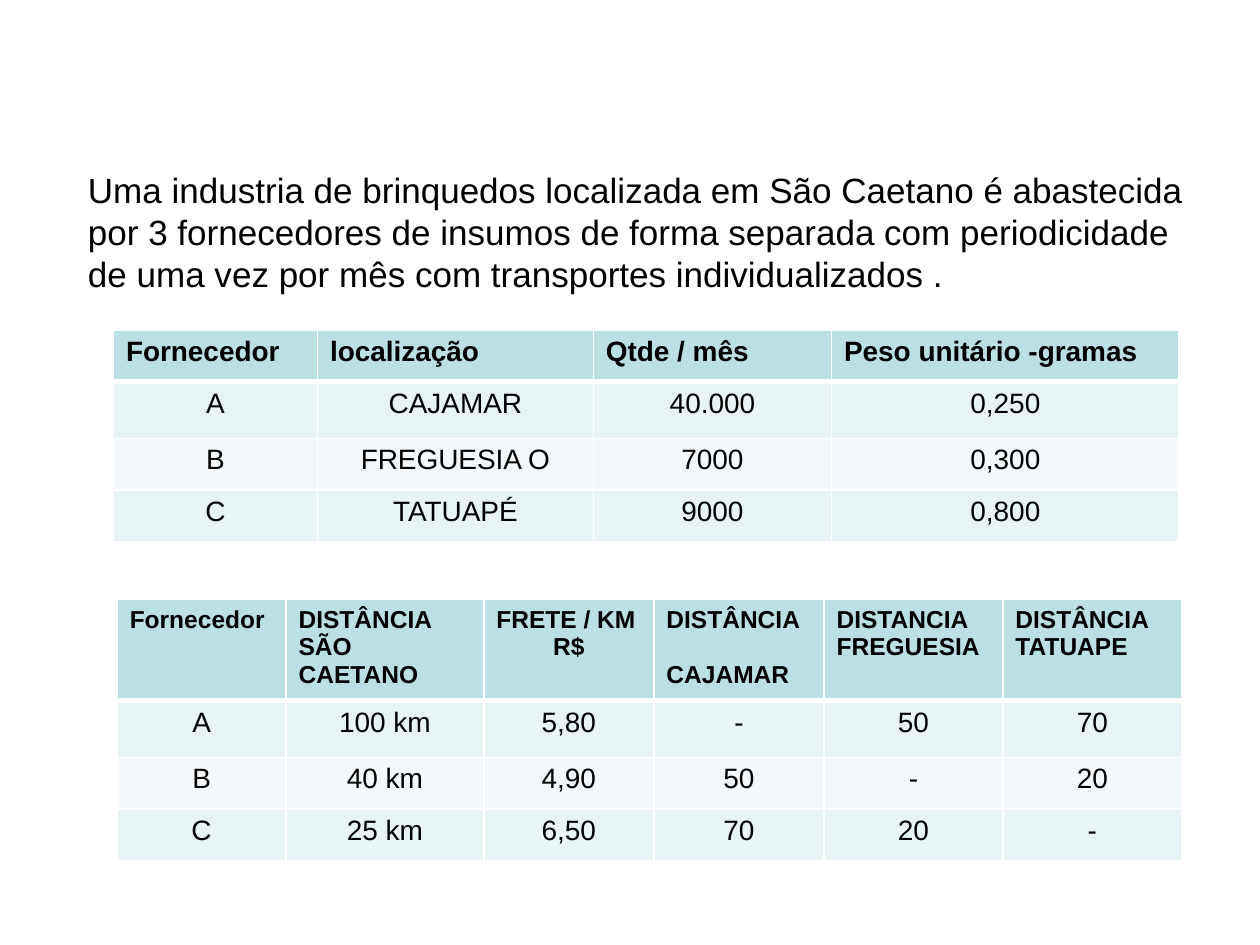
"""Build a slide with a supplier statement and two supplier tables."""
from lxml.etree import SubElement
from pptx import Presentation
from pptx.dml.color import RGBColor
from pptx.enum.text import MSO_AUTO_SIZE, PP_ALIGN
from pptx.oxml.ns import qn
from pptx.util import Inches, Pt

COLORS = {
    "text": "000000",
    "border": "FFFFFF",
    "header": "BBE0E3",
    "odd": "E7F3F4",
    "even": "F3F9FA",
}


def add_text(paragraph, text, size, bold=False):
    run = paragraph.add_run()
    run.text = text
    run.font.name = "Arial"
    run.font.size = Pt(size)
    run.font.bold = bold
    run.font.color.rgb = RGBColor.from_string(COLORS["text"])


def add_border(cell, side, width):
    line = SubElement(cell._tc.get_or_add_tcPr(), qn(f"a:ln{side}"), w=str(Pt(width)))
    fill = SubElement(line, qn("a:solidFill"))
    SubElement(fill, qn("a:srgbClr"), val=COLORS["border"])


presentation = Presentation()
presentation.slide_width = Inches(10)
presentation.slide_height = Inches(7.5)
slide = presentation.slides.add_slide(presentation.slide_layouts[6])

statement = slide.shapes.add_textbox(Inches(0.6), Inches(1.29), Inches(8.9), Inches(1.11))
statement.text_frame.word_wrap = True
statement.text_frame.auto_size = MSO_AUTO_SIZE.SHAPE_TO_FIT_TEXT
add_text(
    statement.text_frame.paragraphs[0],
    "Uma industria de brinquedos localizada em São Caetano é abastecida "
    "por 3 fornecedores de insumos de forma separada com periodicidade "
    "de uma vez por mês com transportes individualizados .",
    20,
)

supplier_tables = [
    {
        "left": 0.9,
        "top": 2.62,
        "header_size": 16,
        "columns": [1.62, 2.19, 1.89, 2.76],
        "heights": [0.41, 0.45, 0.41, 0.41],
        "rows": [
            ["Fornecedor", "localização", "Qtde / mês", "Peso unitário -gramas"],
            ["A", "CAJAMAR", "40.000", "0,250"],
            ["B", "FREGUESIA O", "7000", "0,300"],
            ["C", "TATUAPÉ", "9000", "0,800"],
        ],
    },
    {
        "left": 0.93,
        "top": 4.76,
        "header_size": 14,
        "columns": [1.34, 1.57, 1.35, 1.35, 1.42, 1.42],
        "heights": [0.79, 0.45, 0.41, 0.41],
        "rows": [
            ["Fornecedor", "DISTÂNCIA SÃO CAETANO", "FRETE / KM\nR$",
             "DISTÂNCIA\nCAJAMAR", "DISTANCIA FREGUESIA", "DISTÂNCIA TATUAPE"],
            ["A", "100 km", "5,80", "-", "50", "70"],
            ["B", "40 km", "4,90", "50", "-", "20"],
            ["C", "25 km", "6,50", "70", "20", "-"],
        ],
    },
]

for data in supplier_tables:
    rows, columns, heights = data["rows"], data["columns"], data["heights"]
    table = slide.shapes.add_table(
        len(rows), len(columns), Inches(data["left"]), Inches(data["top"]),
        Inches(sum(columns)), Inches(sum(heights)),
    ).table
    for column, width in zip(table.columns, columns):
        column.width = Inches(width)
    for row_index, (texts, height) in enumerate(zip(rows, heights)):
        table.rows[row_index].height = Inches(height)
        is_header = row_index == 0
        fill_name = "header" if is_header else "odd" if row_index % 2 else "even"
        widths = {"L": 1, "R": 1, "T": 3 if row_index == 1 else 1, "B": 3 if is_header else 1}
        for column_index, text in enumerate(texts):
            cell = table.cell(row_index, column_index)
            for side, width in widths.items():
                add_border(cell, side, width)
            cell.fill.solid()
            cell.fill.fore_color.rgb = RGBColor.from_string(COLORS[fill_name])
            for line_index, line_text in enumerate(text.split("\n")):
                frame = cell.text_frame
                paragraph = frame.add_paragraph() if line_index else frame.paragraphs[0]
                centered = not is_header or line_text == "R$"
                paragraph.alignment = PP_ALIGN.CENTER if centered else PP_ALIGN.LEFT
                if line_text == "CAJAMAR" and is_header:
                    paragraph.space_before = Pt(16)
                add_text(paragraph, line_text, data["header_size"] if is_header else 16, is_header)

presentation.save("out.pptx")
